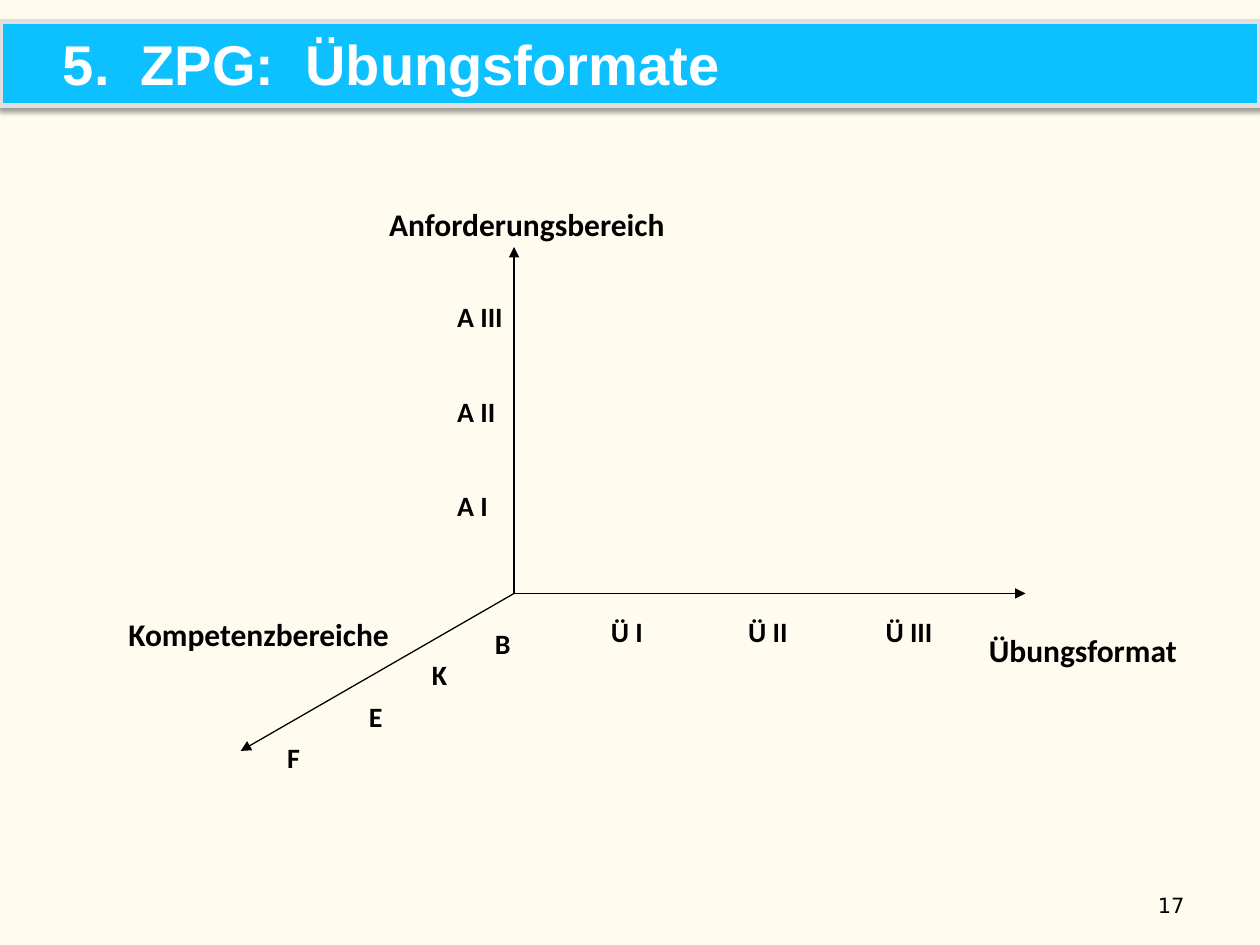
from dataclasses import dataclass

from lxml.etree import SubElement
from pptx import Presentation
from pptx.dml.color import RGBColor
from pptx.enum.shapes import MSO_CONNECTOR, MSO_SHAPE
from pptx.enum.text import MSO_ANCHOR, PP_ALIGN
from pptx.oxml import parse_xml
from pptx.oxml.ns import nsdecls, qn
from pptx.util import Inches, Pt


@dataclass(frozen=True)
class Theme:
    """Colours, fonts and type sizes of the slide."""
    paper: str = "FFFCEF"
    ink: str = "000000"
    white: str = "FFFFFF"
    band: str = "0DC0FF"
    edge: str = "DFDFDF"
    head: str = "Arial"
    body: str = "Calibri"
    digit: str = "DejaVu Sans"
    title: int = 32
    axis: int = 18
    level: int = 16
    page: int = 12


class Board:
    """Draws styled elements on the current slide."""

    def __init__(self, slide, theme):
        """Keep the slide and theme and paint the background."""
        self.slide, self.theme = slide, theme
        fill = slide.background.fill
        fill.solid()
        fill.fore_color.rgb = RGBColor.from_string(theme.paper)

    def letter(self, frame, text, size, font, color, bold=True):
        """Set one styled paragraph and return it."""
        frame.word_wrap = True
        frame.text = text
        para = frame.paragraphs[0]
        style = para.runs[0].font
        style.size, style.name, style.bold = Pt(size), font, bold
        style.color.rgb = RGBColor.from_string(color)
        return para

    def label(self, text, left, top, width, size, height=0.38, inset=0.05):
        """Add a bold label of the diagram."""
        box = self.slide.shapes.add_textbox(
            Inches(left), Inches(top), Inches(width), Inches(height))
        box.text_frame.margin_top = Inches(inset)
        para = self.letter(box.text_frame, text, size, self.theme.body, self.theme.ink)
        para.space_after = Pt(10)

    def arrow(self, start, end):
        """Add an axis with a triangle at its end."""
        line = self.slide.shapes.add_connector(
            MSO_CONNECTOR.STRAIGHT, *map(Inches, start + end))
        line.line.width = Pt(0.75)
        line.line.color.rgb = RGBColor.from_string(self.theme.ink)
        props = line._element.spPr
        SubElement(props.find(qn("a:ln")), qn("a:tailEnd"), type="triangle")
        SubElement(props, qn("a:effectLst"))

    def banner(self, text):
        """Add the title band with its soft shadow."""
        theme = self.theme
        band = self.slide.shapes.add_shape(
            MSO_SHAPE.RECTANGLE, 0, Inches(0.17), Inches(10), Inches(0.67))
        band.fill.solid()
        band.fill.fore_color.rgb = RGBColor.from_string(theme.band)
        band.line.color.rgb = RGBColor.from_string(theme.edge)
        band.line.width = Pt(3)
        band._element.spPr.append(parse_xml(
            f'<a:effectLst {nsdecls("a")}><a:outerShdw blurRad="{Pt(3.1)}" '
            f'dist="{Pt(1.6)}" dir="5400000" rotWithShape="0">'
            f'<a:srgbClr val="{theme.ink}"><a:alpha val="38000"/></a:srgbClr>'
            '</a:outerShdw></a:effectLst>'))
        frame = band.text_frame
        frame.margin_left, frame.margin_top = Inches(0.5), Inches(0.04)
        frame.vertical_anchor = MSO_ANCHOR.MIDDLE
        para = self.letter(frame, text, theme.title, theme.head, theme.white)
        para.alignment = PP_ALIGN.LEFT

    def number(self, text):
        """Add the page number."""
        theme = self.theme
        box = self.slide.shapes.add_textbox(
            Inches(7.17), Inches(6.83), Inches(2.33), Inches(0.5))
        box.text_frame.vertical_anchor = MSO_ANCHOR.BOTTOM
        para = self.letter(box.text_frame, text, theme.page, theme.digit, theme.ink, False)
        para.alignment = PP_ALIGN.RIGHT


def main():
    """Build and save the slide."""
    deck = Presentation()
    deck.slide_width, deck.slide_height = Inches(10), Inches(7.5)
    theme = Theme()
    board = Board(deck.slides.add_slide(deck.slide_layouts[6]), theme)

    origin = (4.08, 4.71)
    for tip in ((4.08, 1.96), (8.14, 4.71), (1.91, 5.96)):
        board.arrow(origin, tip)

    board.label("Anforderungsbereich", 2.99, 1.58, 2.51, theme.axis)
    board.label("Kompetenzbereiche", 0.92, 4.83, 2.4, theme.axis)
    board.label("Übungsformat", 7.75, 4.58, 1.75, theme.axis, 0.58, 0.43)

    for step, (grade, width) in enumerate((("I", 0.54), ("II", 0.54), ("III", 0.68))):
        board.label(f"A {grade}", 3.53, 3.83 - 0.75 * step, width, theme.level)
        board.label(f"Ü {grade}", 4.75 + 1.09 * step, 4.83, width, theme.level)

    fields = (("F", 2.18, 5.83), ("E", 2.83, 5.5), ("K", 3.33, 5.17), ("B", 3.83, 4.92))
    for name, left, top in fields:
        board.label(name, left, top, 0.41, theme.level)

    board.banner("5.  ZPG:  Übungsformate")
    board.number("17")
    deck.save("out.pptx")


if __name__ == "__main__":
    main()
